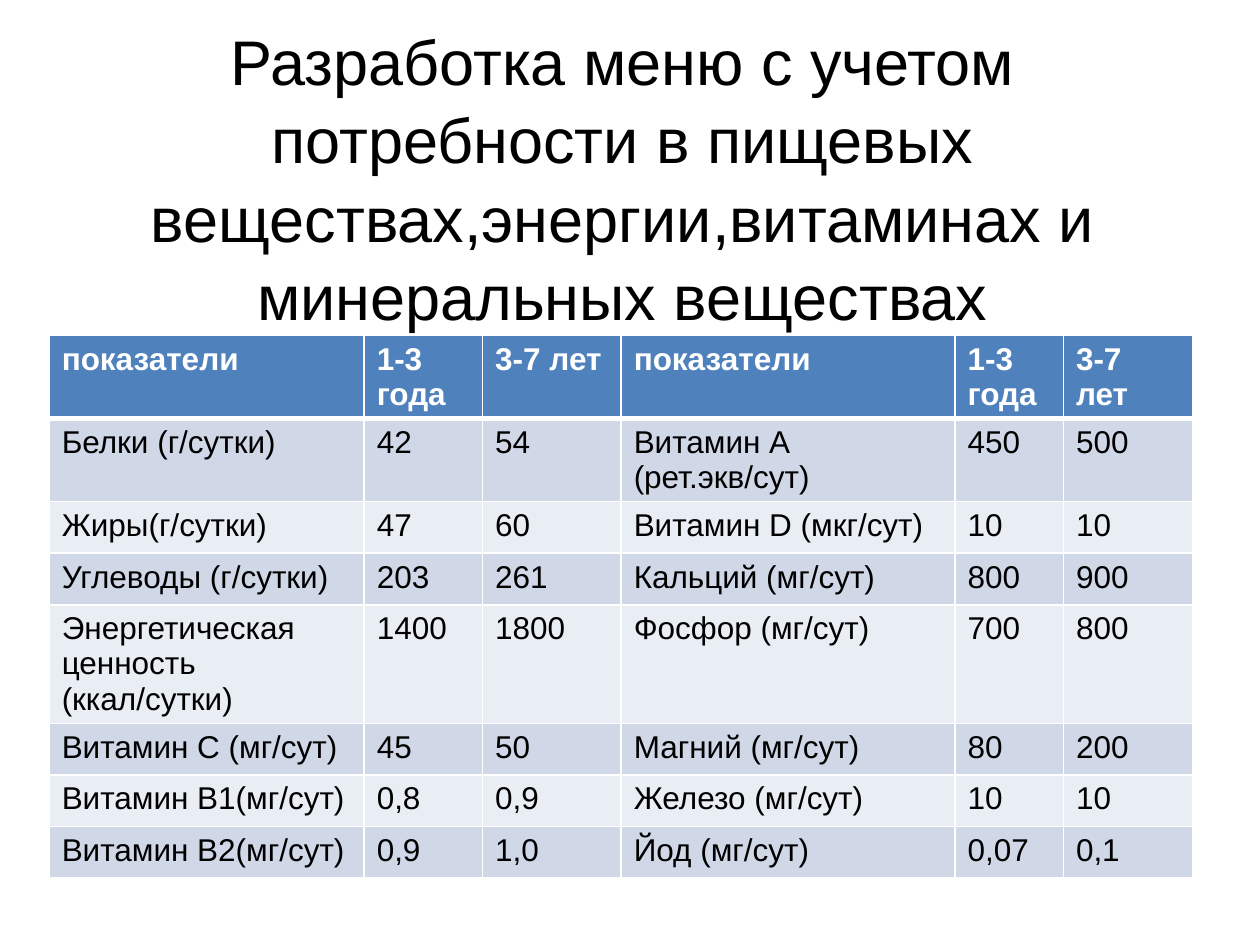
from lxml.etree import SubElement
from pptx import Presentation
from pptx.dml.color import RGBColor
from pptx.enum.text import MSO_ANCHOR, MSO_AUTO_SIZE, PP_ALIGN
from pptx.oxml.ns import qn
from pptx.util import Inches, Pt

TITLE = "Разработка меню с учетом потребности в пищевых веществах,энергии,витаминах и минеральных веществах"
COLUMN_WIDTHS = [2.5, 0.94, 1.1, 2.65, 0.86, 1.03]
NUTRIENT_ROWS = [
    ["показатели", "1-3 года", "3-7 лет"] * 2,
    ["Белки (г/сутки)", "42", "54", "Витамин А (рет.экв/сут)", "450", "500"],
    ["Жиры(г/сутки)", "47", "60", "Витамин D (мкг/сут)", "10", "10"],
    ["Углеводы (г/сутки)", "203", "261", "Кальций (мг/сут)", "800", "900"],
    ["Энергетическая ценность (ккал/сутки)", "1400", "1800", "Фосфор (мг/сут)", "700", "800"],
    ["Витамин С (мг/сут)", "45", "50", "Магний (мг/сут)", "80", "200"],
    ["Витамин В1(мг/сут)", "0,8", "0,9", "Железо (мг/сут)", "10", "10"],
    ["Витамин В2(мг/сут)", "0,9", "1,0", "Йод (мг/сут)", "0,07", "0,1"],
]


def color(value):
    return RGBColor.from_string(value)


def write_text(text_frame, text, font_name="Arial", size=18, font_color="000000",
               bold=False, alignment=PP_ALIGN.LEFT, line_spacing=None):
    paragraph = text_frame.paragraphs[0]
    paragraph.alignment = alignment
    paragraph.line_spacing = line_spacing
    run = paragraph.add_run()
    run.text = text
    run.font.name = font_name
    run.font.size = Pt(size)
    run.font.bold = bold
    run.font.color.rgb = color(font_color)


class SlideBuilder:
    header_fill = "4F81BD"
    band_fills = ["E9EDF4", "D0D8E8"]
    white = "FFFFFF"

    def __init__(self, presentation):
        self.slide = presentation.slides.add_slide(presentation.slide_layouts[5])

    def add_title(self, text, left, top, width, height):
        title = self.slide.shapes.title
        title.left, title.top = Inches(left), Inches(top)
        title.width, title.height = Inches(width), Inches(height)
        text_frame = title.text_frame
        text_frame.word_wrap = True
        text_frame.auto_size = MSO_AUTO_SIZE.NONE
        text_frame.vertical_anchor = MSO_ANCHOR.MIDDLE
        write_text(text_frame, text, size=36, alignment=PP_ALIGN.CENTER, line_spacing=1.04)

    def add_table(self, rows, column_widths, left, top, row_height):
        frame = self.slide.shapes.add_table(
            len(rows), len(column_widths), Inches(left), Inches(top),
            Inches(sum(column_widths)), Inches(row_height * len(rows)))
        table = frame.table
        for column, width in zip(table.columns, column_widths):
            column.width = Inches(width)
        for row_index, values in enumerate(rows):
            table.rows[row_index].height = Inches(row_height)
            for column_index, value in enumerate(values):
                self.format_cell(table.cell(row_index, column_index), value, row_index)

    def format_cell(self, cell, text, row_index):
        is_header = row_index == 0
        write_text(cell.text_frame, text, bold=is_header,
                   font_color=self.white if is_header else "000000")
        self.add_borders(cell, top=3 if row_index == 1 else 1, bottom=3 if is_header else 1)
        cell.fill.solid()
        fill = self.header_fill if is_header else self.band_fills[row_index % 2]
        cell.fill.fore_color.rgb = color(fill)

    def add_borders(self, cell, top, bottom):
        properties = cell._tc.get_or_add_tcPr()
        for side, width in (("L", 1), ("R", 1), ("T", top), ("B", bottom)):
            line = SubElement(properties, qn(f"a:ln{side}"), w=str(Pt(width)))
            fill = SubElement(line, qn("a:solidFill"))
            SubElement(fill, qn("a:srgbClr"), val=self.white)


def main():
    presentation = Presentation()
    presentation.slide_width = Inches(10)
    presentation.slide_height = Inches(7.5)
    builder = SlideBuilder(presentation)
    builder.add_title(TITLE, 0.5, 0.3, 8.88, 2.2)
    builder.add_table(NUTRIENT_ROWS, COLUMN_WIDTHS, 0.39, 2.66, 0.41)
    presentation.save("out.pptx")


if __name__ == "__main__":
    main()
